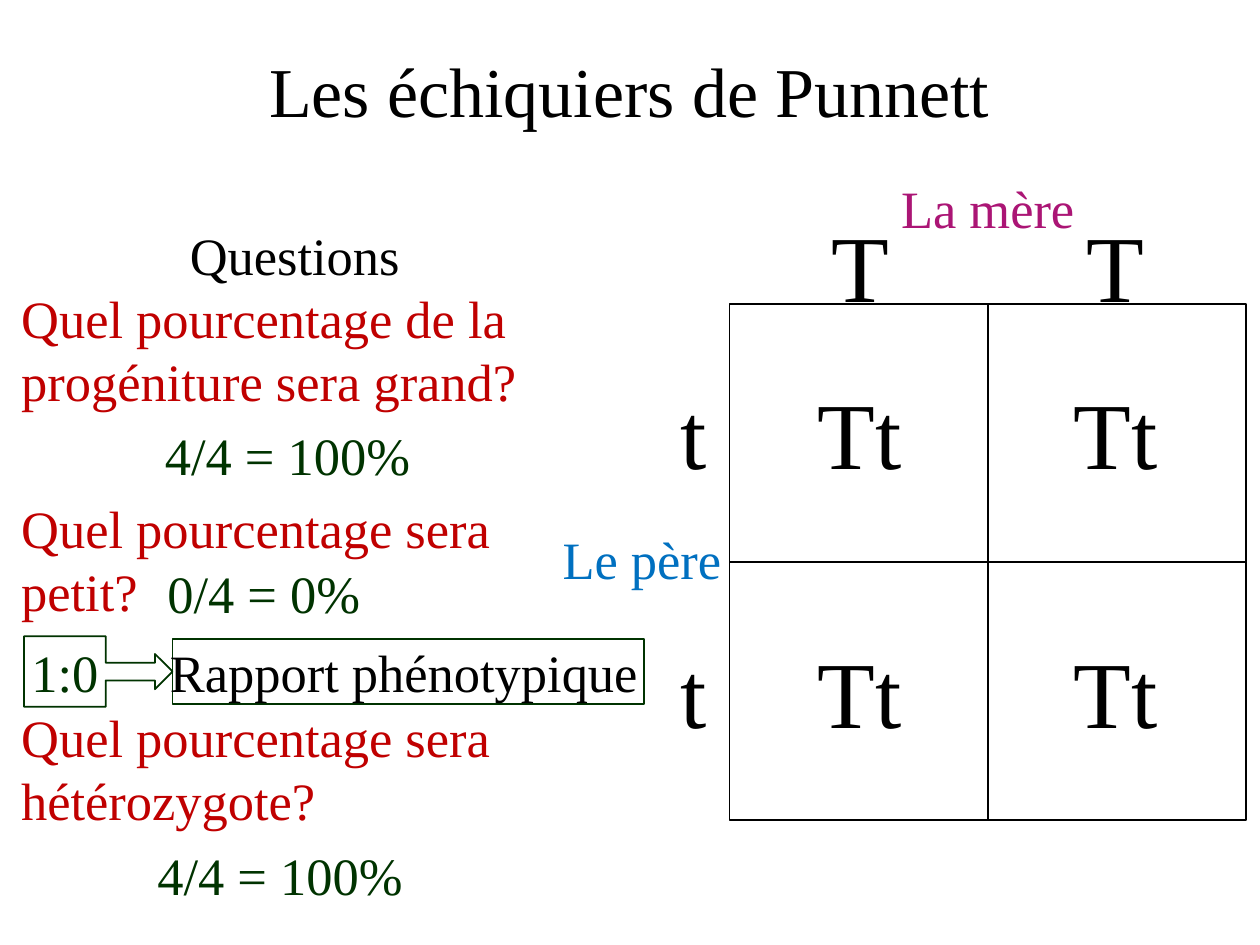
from pptx import Presentation
from pptx.dml.color import RGBColor
from pptx.enum.shapes import MSO_SHAPE
from pptx.enum.text import MSO_ANCHOR, MSO_AUTO_SIZE, PP_ALIGN
from pptx.util import Inches, Pt

COLORS = {
    "black": "000000",
    "white": "FFFFFF",
    "mother": "AB1575",
    "father": "0070C0",
    "question": "C00000",
    "answer": "003300",
}
LEFT, CENTER = PP_ALIGN.LEFT, PP_ALIGN.CENTER


class SlideBuilder:
    font = "Times New Roman"
    body_size = 30
    allele_size = 54

    def __init__(self, slide):
        self.slide = slide

    def color(self, name):
        return RGBColor.from_string(COLORS[name])

    def add_span(self, para, words, size, color, align):
        para.alignment = align
        span = para.add_run()
        span.text = words
        span.font.name = self.font
        span.font.size = Pt(size)
        span.font.color.rgb = self.color(color)

    def title(self, words, left, top, width, height):
        box = self.slide.shapes.title
        box.left, box.top = Inches(left), Inches(top)
        box.width, box.height = Inches(width), Inches(height)
        box.text_frame.vertical_anchor = MSO_ANCHOR.MIDDLE
        para = box.text_frame.paragraphs[0]
        para.line_spacing = 0.9
        self.add_span(para, words, 40, "black", CENTER)

    def text(self, lines, left, top, width, height, size=body_size):
        """Each line is (words, colour, alignment)."""
        box = self.slide.shapes.add_textbox(
            Inches(left), Inches(top), Inches(width), Inches(height))
        frame = box.text_frame
        frame.word_wrap = True
        frame.auto_size = MSO_AUTO_SIZE.SHAPE_TO_FIT_TEXT
        for index, line in enumerate(lines):
            para = frame.add_paragraph() if index else frame.paragraphs[0]
            words, color, align = line
            self.add_span(para, words, size, color, align)

    def allele(self, letters, left, top):
        self.text([(letters, "black", CENTER)], left, top, 0.95, 1.01,
                  self.allele_size)

    def shape(self, kind, left, top, width, height, line, fill=None):
        shape = self.slide.shapes.add_shape(
            kind, Inches(left), Inches(top), Inches(width), Inches(height))
        shape.shadow.inherit = False
        if fill:
            shape.fill.solid()
            shape.fill.fore_color.rgb = self.color(fill)
        else:
            shape.fill.background()
        shape.line.color.rgb = self.color(line)
        shape.line.width = Pt(1)
        return shape


def main():
    deck = Presentation()
    deck.slide_width, deck.slide_height = Inches(10), Inches(7.5)
    page = SlideBuilder(deck.slides.add_slide(deck.slide_layouts[5]))

    page.title("Les échiquiers de Punnett", 0.34, 0.4, 9.31, 0.71)

    # Punnett square
    cell, grid_left, grid_top = 2.05, 5.79, 2.41
    for row in range(2):
        for column in range(2):
            page.shape(MSO_SHAPE.RECTANGLE, grid_left + column * cell,
                       grid_top + row * cell, cell, cell, "black", "white")

    # Parents
    page.text([("La mère", "mother", CENTER)], 6.73, 1.35, 2.22, 0.61)
    page.text([("Le père", "father", CENTER)], 4.35, 4.13, 1.49, 0.61)

    # Parent alleles and offspring genotypes
    column_lefts, row_tops = (6.35, 8.38), (2.93, 4.98)
    for left in column_lefts:
        page.allele("T", left, 1.6)
    for top in row_tops:
        page.allele("t", 5.03, top)
        for left in column_lefts:
            page.allele("Tt", left, top)

    # Questions
    page.text([("Questions", "black", CENTER),
               ("Quel pourcentage de la progéniture sera grand?",
                "question", LEFT)], 0.07, 1.72, 4.54, 1.62)
    for words, top in (("Quel pourcentage sera petit?", 3.89),
                       ("Quel pourcentage sera hétérozygote?", 5.55)):
        page.text([(words, "question", LEFT)], 0.07, top, 4.54, 1.11)

    # Answers
    for words, left, top, width in (("4/4 = 100%", 1.21, 3.31, 2.27),
                                    ("0/4 = 0%", 1.23, 4.4, 2.05),
                                    ("4/4 = 100%", 1.15, 6.64, 2.38)):
        page.text([(words, "answer", LEFT)], left, top, width, 0.61)

    # Phenotypic ratio
    page.shape(MSO_SHAPE.RECTANGLE, 1.37, 5.07, 3.74, 0.52, "answer", "white")
    page.text([("Rapport phénotypique", "black", LEFT)],
              1.25, 5.03, 3.97, 0.61)
    callout = page.shape(MSO_SHAPE.DOWN_ARROW_CALLOUT,
                         0.5, 4.74, 0.56, 1.18, "answer")
    callout.rotation = 270
    callout.adjustments[3] = 0.55
    page.text([("1:0", "answer", LEFT)], 0.15, 5.03, 0.91, 0.61)

    deck.save("out.pptx")


if __name__ == "__main__":
    main()
